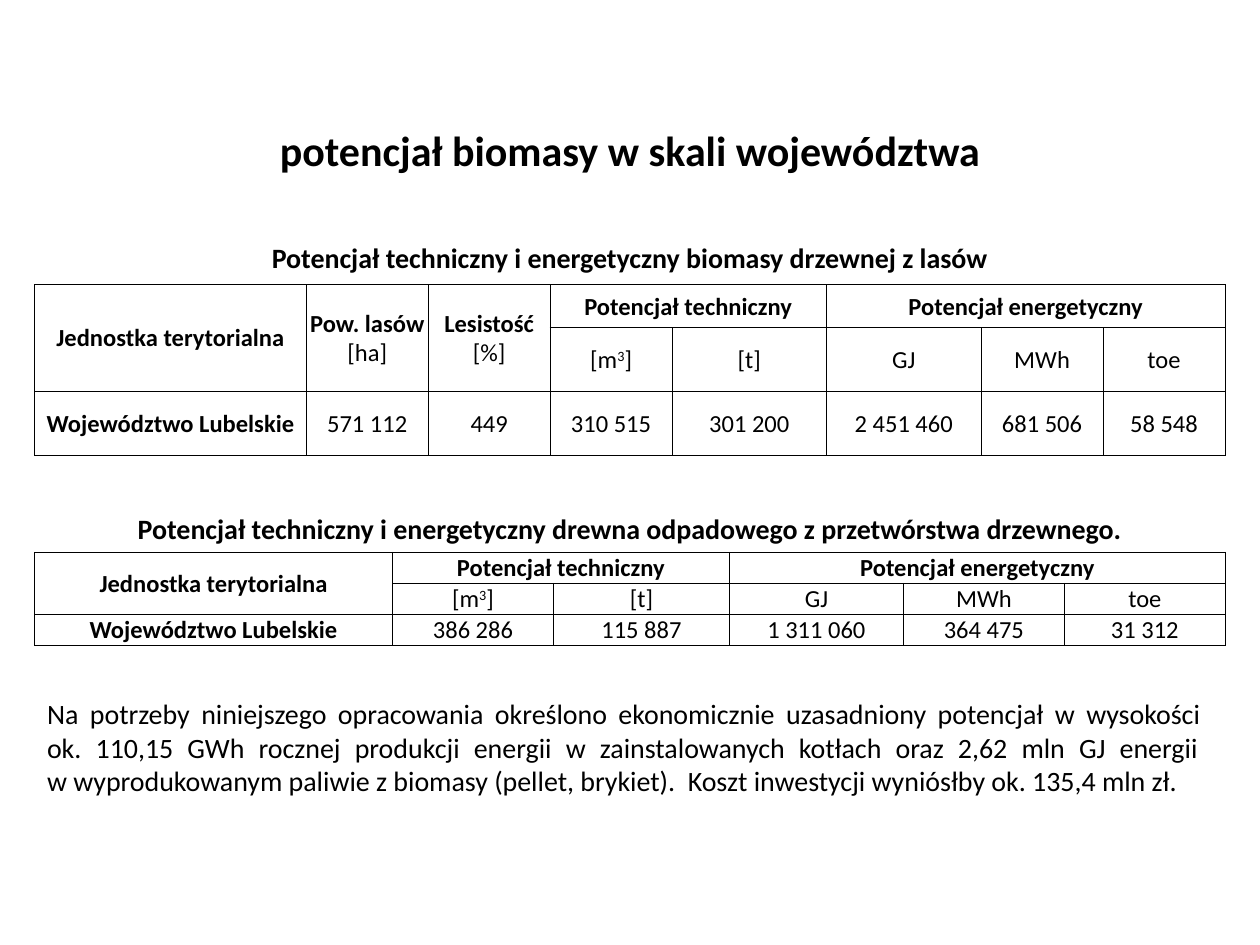
import pptx
import pptx.util
import pptx.dml.color
import pptx.enum.text
from lxml import etree
from pptx.util import Pt
from pptx.enum.text import MSO_ANCHOR, PP_ALIGN

COLORS = {"text": "000000", "border": "000000"}
FONT = "Calibri"
LEFT = 19.8
A = "{http://schemas.openxmlformats.org/drawingml/2006/main}"


def format_paragraph(paragraph, size, bold, align):
    paragraph.alignment = align
    for run in paragraph.runs:
        run.font.name = FONT
        run.font.size = Pt(size)
        run.font.bold = bold
        run.font.color.rgb = pptx.dml.color.RGBColor.from_string(COLORS["text"])


def fill_cell(cell, text, header):
    """Fill one cell; "|" separates runs, a lone 3 is a superscript."""
    cell.fill.background()
    cell.vertical_anchor = MSO_ANCHOR.MIDDLE
    cell.margin_left = cell.margin_right = cell.margin_top = Pt(0.7)
    cell.margin_bottom = Pt(0)
    paragraph = cell.text_frame.paragraphs[0]
    for part in text.split("|") if text else []:
        paragraph.add_run().text = part
    format_paragraph(paragraph, 14, False, PP_ALIGN.CENTER)
    for run in paragraph.runs:
        run.font.bold = header and not run.text.startswith("[")
        if run.text == "3":
            run.font._element.set("baseline", "30000")
    # Borders go before the fill in the cell properties
    properties = cell._tc.get_or_add_tcPr()
    for position, side in enumerate(("lnL", "lnR", "lnT", "lnB")):
        line = etree.Element(A + side, w=str(Pt(0.5)))
        solid = etree.SubElement(line, A + "solidFill")
        etree.SubElement(solid, A + "srgbClr", val=COLORS["border"])
        properties.insert(position, line)


presentation = pptx.Presentation()
presentation.slide_width = Pt(720)
presentation.slide_height = Pt(540)
slide = presentation.slides.add_slide(presentation.slide_layouts[5])

# Title
title = slide.shapes.title
title.left, title.top, title.width, title.height = Pt(0), Pt(60), Pt(720), Pt(51)
title.text_frame.text = "potencjał biomasy w skali województwa"
title.text_frame.vertical_anchor = MSO_ANCHOR.MIDDLE
format_paragraph(title.text_frame.paragraphs[0], 24, True, PP_ALIGN.CENTER)

# Tables: top, column widths, row heights, rows, merges (row, column, row, column)
forest_biomass = (
    162.6,
    [155.2, 69.7, 69.7, 69.7, 88.3, 88.3, 69.7, 69.7],
    [24.5, 36.6, 36.6],
    [
        ["Jednostka terytorialna", "Pow. lasów |[ha]", "Lesistość |[%]",
         "Potencjał techniczny", "", "Potencjał energetyczny", "", ""],
        ["", "", "", "[m|3|]", "[t]", "GJ", "MWh", "toe"],
        ["Województwo Lubelskie", "571 112", "449", "310 515", "301 200",
         "2 451 460", "681 506", "58 548"],
    ],
    [(0, 0, 1, 0), (0, 1, 1, 1), (0, 2, 1, 2), (0, 3, 0, 4), (0, 5, 0, 7)],
)
waste_wood = (
    315.6,
    [204.5, 92, 100.6, 99.4, 92, 92],
    [17.5, 17.5, 17.5],
    [
        ["Jednostka terytorialna", "Potencjał techniczny", "",
         "Potencjał energetyczny", "", ""],
        ["", "[m|3|]", "[t]", "GJ", "MWh", "toe"],
        ["Województwo Lubelskie", "386 286", "115 887", "1 311 060",
         "364 475", "31 312"],
    ],
    [(0, 0, 1, 0), (0, 1, 0, 2), (0, 3, 0, 5)],
)
for top, widths, heights, rows, merges in (forest_biomass, waste_wood):
    table = slide.shapes.add_table(
        len(rows), len(widths), Pt(LEFT), Pt(top), Pt(sum(widths)), Pt(sum(heights))
    ).table
    table.first_row = table.horz_banding = False
    for column, width in zip(table.columns, widths):
        column.width = Pt(width)
    for row, height in zip(table.rows, heights):
        row.height = Pt(height)
    for r, texts in enumerate(rows):
        for c, text in enumerate(texts):
            fill_cell(table.cell(r, c), text, r == 0 or c == 0)
    for r1, c1, r2, c2 in merges:
        table.cell(r1, c1).merge(table.cell(r2, c2))

# Table captions and closing paragraph: left, top, width, height, bold, align, text
conclusion = (
    "Na potrzeby niniejszego opracowania określono ekonomicznie uzasadniony potencjał w wysokości \v"
    "ok. 110,15 GWh rocznej produkcji energii w zainstalowanych kotłach oraz 2,62 mln GJ energii \v"
    "w wyprodukowanym paliwie z biomasy (pellet, brykiet).  Koszt inwestycji wyniósłby ok. 135,4 mln zł."
)
for left, top, width, height, bold, align, text in (
    (0, 134, 720, 26.7, True, PP_ALIGN.CENTER,
     "Potencjał techniczny i energetyczny biomasy drzewnej z lasów"),
    (0, 288.7, 720, 26.7, True, PP_ALIGN.CENTER,
     "Potencjał techniczny i energetyczny drewna odpadowego z przetwórstwa drzewnego."),
    (LEFT, 394.6, 680.4, 87, False, PP_ALIGN.JUSTIFY, conclusion),
):
    frame = slide.shapes.add_textbox(Pt(left), Pt(top), Pt(width), Pt(height)).text_frame
    frame.word_wrap = True
    frame.paragraphs[0].text = text
    format_paragraph(frame.paragraphs[0], 16, bold, align)

presentation.save("out.pptx")
